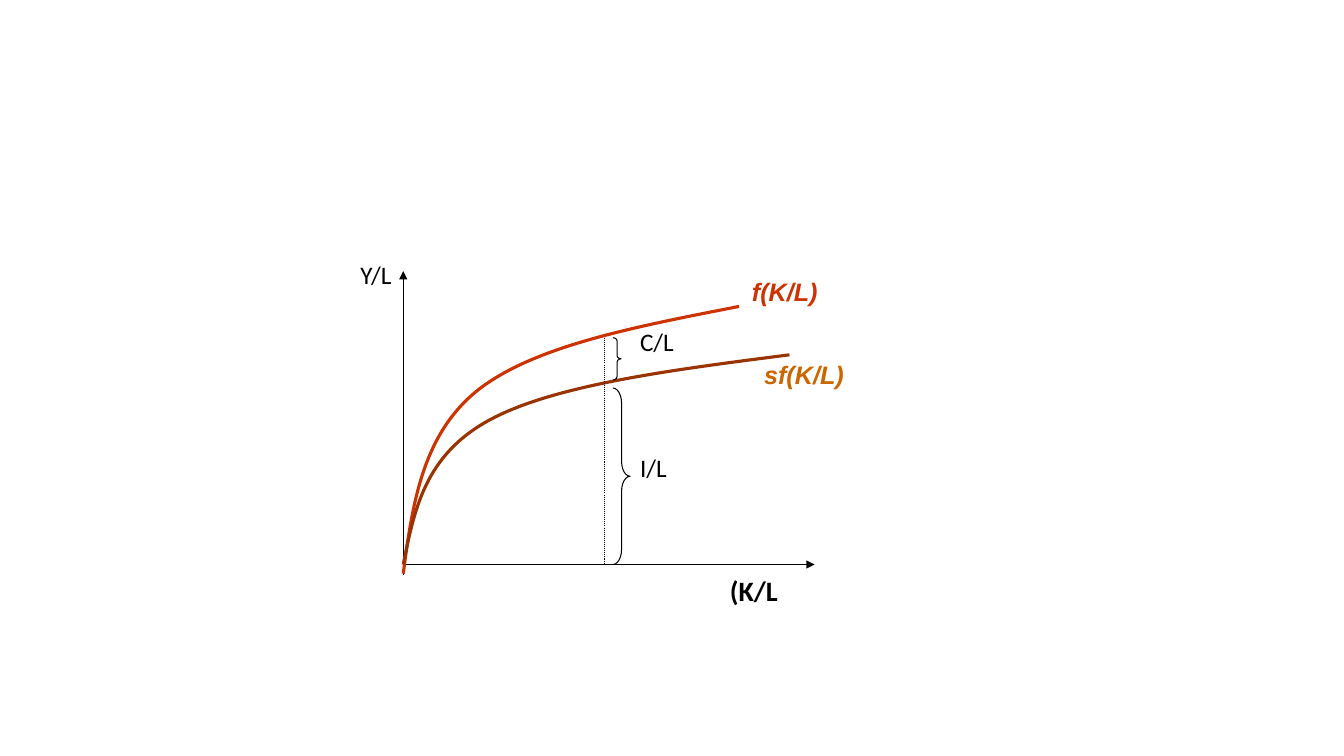
from lxml.etree import SubElement
from pptx import Presentation
from pptx.dml.color import RGBColor
from pptx.enum.dml import MSO_LINE
from pptx.enum.shapes import MSO_CONNECTOR, MSO_SHAPE
from pptx.enum.text import MSO_AUTO_SIZE, PP_ALIGN
from pptx.oxml.ns import qn
from pptx.util import Inches, Pt

BLACK = "000000"
ORIGIN_X, BASE_Y = 4, 5.6
CAPITAL_X = 6  # capital per worker where output is split
BRACE_X = 6.08

# Axes: start, end
AXES = [
    ((ORIGIN_X, 5.7), (ORIGIN_X, 2.69)),
    ((ORIGIN_X, BASE_Y), (8.08, BASE_Y)),
]

# Curves: Bezier points (start, then two controls and an end per segment)
CURVES = [
    {
        "points": [(4, 5.69), (4.09, 5), (4.19, 4.31), (4.74, 3.87),
                   (5.3, 3.43), (6.31, 3.24), (7.33, 3.04)],
        "color": "CC3300",
        "label": ("f(K/L)", (7.36, 2.69, 0.86, 0.4), "CC3300"),
    },
    {
        "points": [(4, 5.6), (4.11, 5.06), (4.21, 4.52), (4.85, 4.17),
                   (5.49, 3.82), (6.66, 3.67), (7.83, 3.52)],
        "color": "993300",
        "label": ("sf(K/L)", (7.48, 3.52, 1, 0.4), "CC6600"),
    },
]

# Braces: top, bottom, width, curl
BRACES = [(3.35, 3.77, 0.08, 0.417), (3.85, BASE_Y, 0.17, 0.875)]

# Labels: text, box, size, bold, alignment
LABELS = [
    ("Y/L", (3.23, 2.52, 0.75, 0.4), 18, False, PP_ALIGN.RIGHT),
    ("(K/L", (7.14, 5.64, 2.42, 0.44), 20, True, PP_ALIGN.LEFT),
    ("C/L", (6.25, 3.19, 0.83, 0.4), 18, False, PP_ALIGN.LEFT),
    ("I/L", (6.25, 4.44, 0.83, 0.4), 18, False, PP_ALIGN.LEFT),
]


def rgb(color):
    return RGBColor.from_string(color)


def style_line(shape, color, width):
    shape.line.color.rgb = rgb(color)
    shape.line.width = Pt(width)


def add_line(shapes, start, end, width, arrow=False):
    line = shapes.add_connector(
        MSO_CONNECTOR.STRAIGHT, *[Inches(value) for value in start + end])
    style_line(line, BLACK, width)
    if arrow:
        SubElement(line.line._get_or_add_ln(), qn("a:tailEnd"), type="triangle")
    SubElement(line.element.spPr, qn("a:effectLst"))
    return line


def add_curve(shapes, points, color):
    # The builder rounds coordinates to whole units, so give it full lengths
    points = [(Inches(x), Inches(y)) for x, y in points]
    builder = shapes.build_freeform(*points[0], scale=1.0)
    builder.add_line_segments(points[1:], close=False)
    curve = builder.convert_to_shape()
    curve.shadow.inherit = False
    curve.fill.background()
    style_line(curve, color, 2.25)
    # Join every three straight segments into one cubic segment
    outline = next(curve.element.iter(qn("a:path")))
    segments = outline.findall(qn("a:lnTo"))
    for first in range(0, len(segments), 3):
        cubic = SubElement(outline, qn("a:cubicBezTo"))
        for segment in segments[first:first + 3]:
            cubic.append(segment[0])
            outline.remove(segment)


def add_label(shapes, text, box, size, color=BLACK, font="Calibri", bold=False,
              italic=False, align=PP_ALIGN.LEFT, wrap=True):
    label = shapes.add_textbox(*[Inches(value) for value in box])
    frame = label.text_frame
    frame.word_wrap = wrap
    frame.auto_size = MSO_AUTO_SIZE.SHAPE_TO_FIT_TEXT
    paragraph = frame.paragraphs[0]
    paragraph.alignment = align
    run = paragraph.add_run()
    run.text = text
    run.font.name = font
    run.font.size = Pt(size)
    run.font.bold = bold
    run.font.italic = italic
    run.font.color.rgb = rgb(color)


def add_brace(shapes, top, bottom, width, curl):
    brace = shapes.add_shape(
        MSO_SHAPE.RIGHT_BRACE, Inches(BRACE_X), Inches(top),
        Inches(width), Inches(bottom - top))
    brace.adjustments[0] = curl
    brace.shadow.inherit = False
    brace.fill.background()
    style_line(brace, BLACK, 0.75)


def main():
    presentation = Presentation()
    presentation.slide_width = Inches(13.33)
    presentation.slide_height = Inches(7.5)
    slide = presentation.slides.add_slide(presentation.slide_layouts[6])
    shapes = slide.shapes

    # Axes
    for start, end in AXES:
        add_line(shapes, start, end, 0.5, arrow=True)

    # Each curve grouped with its label
    for curve in CURVES:
        group = shapes.add_group_shape()
        add_curve(group.shapes, curve["points"], curve["color"])
        text, box, color = curve["label"]
        add_label(group.shapes, text, box, 18, color, "Arial",
                  bold=True, italic=True, wrap=False)

    # Split of output into consumption and investment
    divider = add_line(shapes, (CAPITAL_X, 3.35), (CAPITAL_X, BASE_Y), 0.75)
    divider.line.dash_style = MSO_LINE.ROUND_DOT
    for brace in BRACES:
        add_brace(shapes, *brace)

    # Axis and brace labels
    for text, box, size, bold, align in LABELS:
        add_label(shapes, text, box, size, bold=bold, align=align)

    presentation.save("out.pptx")


if __name__ == "__main__":
    main()
